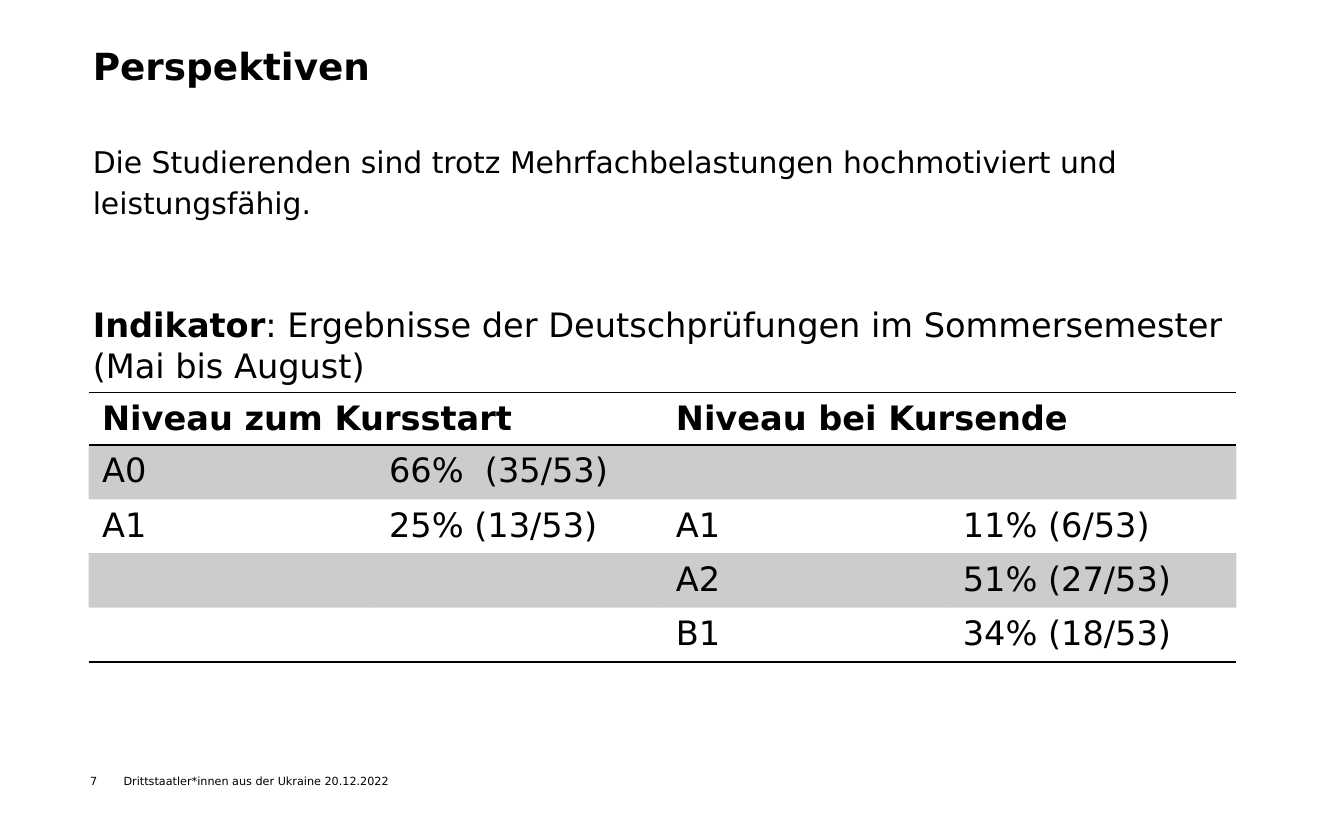
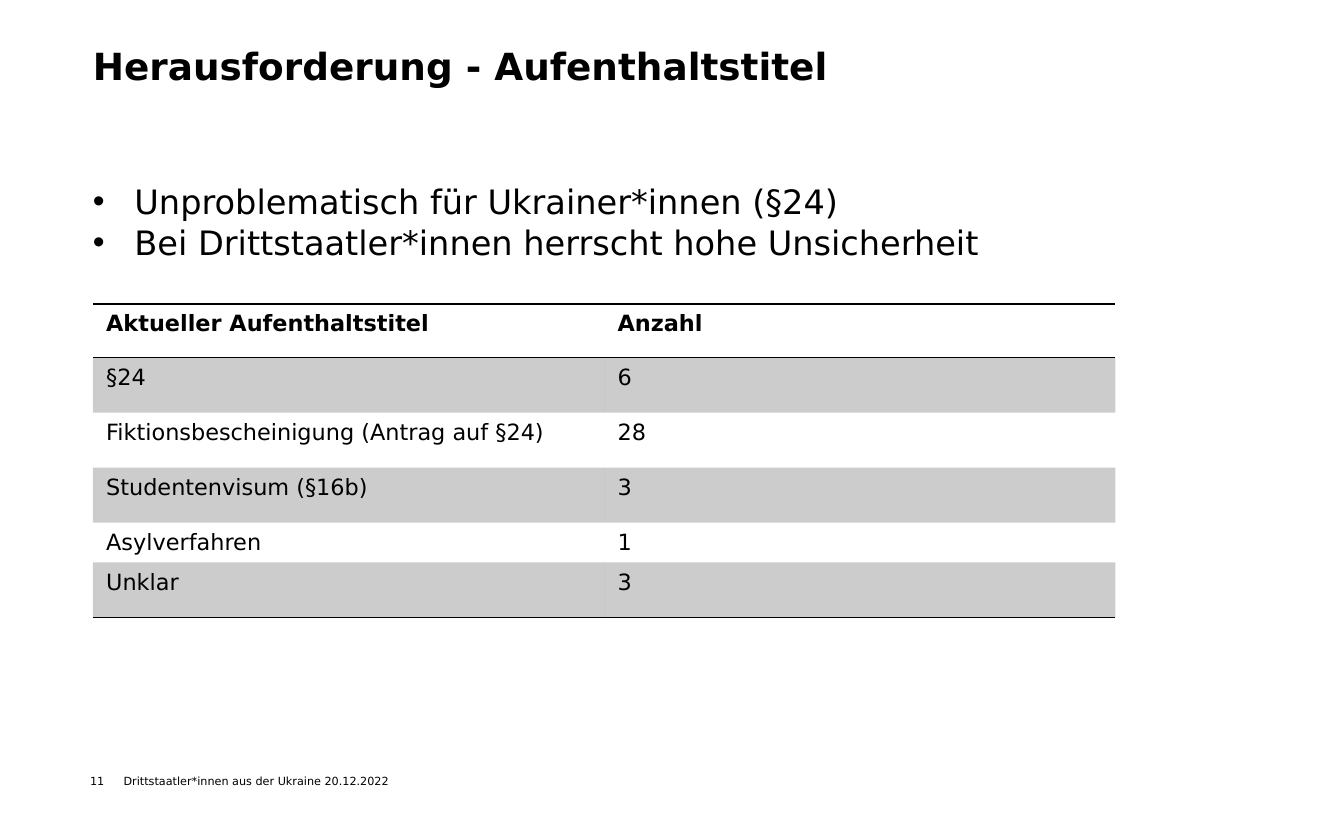
from typing import NamedTuple

from lxml.etree import SubElement
from pptx import Presentation
from pptx.dml.color import RGBColor
from pptx.enum.text import MSO_ANCHOR, MSO_AUTO_SIZE, PP_ALIGN
from pptx.oxml import parse_xml
from pptx.oxml.ns import nsdecls, qn
from pptx.util import Inches, Pt

BLACK = RGBColor(0, 0, 0)
FONT = "DejaVu Sans"
LEFT, WIDTH = 0.69, 8.62
LEAD = Pt(22)
FOOTER = "Drittstaatler*innen aus der Ukraine 20.12.2022"
NO_GRID = "{2D5ABB26-0587-4C30-8999-92F81FD0307C}"


class Box(NamedTuple):
    left: float
    top: float
    width: float
    height: float

    def lengths(self) -> list:
        return [Inches(side) for side in self]


class Grid(NamedTuple):
    box: Box
    heights: list[float]
    rows: list[list[str]]
    size: int
    span: int = 1


class Run(NamedTuple):
    text: str
    size: int = 18
    bold: bool = False


class Para(NamedTuple):
    runs: list[Run]
    before: int = 0
    bullet: bool = False


class Page(NamedTuple):
    number: int
    title: str
    body: Box
    paras: list[Para]
    grid: Grid


def write(para, text: str, *, size: int, bold: bool = False) -> None:
    run = para.add_run()
    run.text = text
    run.font.name = FONT
    run.font.size = Pt(size)
    run.font.bold = bold
    run.font.color.rgb = BLACK


def place(shape, box: Box):
    """Move a text shape and strip its insets; return its text frame."""
    shape.left, shape.top, shape.width, shape.height = box.lengths()
    frame = shape.text_frame
    frame.word_wrap = True
    frame.auto_size = MSO_AUTO_SIZE.NONE
    frame.vertical_anchor = MSO_ANCHOR.TOP
    frame.margin_left = frame.margin_right = 0
    frame.margin_top = frame.margin_bottom = 0
    return frame


def set_bullet(para, shown: bool) -> None:
    props = para._p.get_or_add_pPr()
    indent = Inches(0.31) if shown else 0
    props.set("marL", str(indent))
    props.set("indent", str(-indent))
    if shown:
        SubElement(props, qn("a:buChar")).set("char", "•")
    else:
        SubElement(props, qn("a:buNone"))


def add_body(shape, box: Box, paras: list[Para]) -> None:
    frame = place(shape, box)
    for index, item in enumerate(paras):
        para = frame.add_paragraph() if index else frame.paragraphs[0]
        set_bullet(para, item.bullet)
        para.alignment = PP_ALIGN.LEFT
        para.line_spacing = LEAD
        para.space_before = Pt(item.before)
        for run in item.runs:
            write(para, run.text, size=run.size, bold=run.bold)


def add_rules(cell, sides: str) -> None:
    """Draw black lines on the sides named by T and B."""
    props = cell._tc.get_or_add_tcPr()
    for index, side in enumerate(sides):
        props.insert(index, parse_xml(
            f'<a:ln{side} {nsdecls("a")} w="{Pt(1)}"><a:solidFill>'
            f'<a:srgbClr val="{BLACK}"/></a:solidFill></a:ln{side}>'))


def shade(cell, banded: bool) -> None:
    if not banded:
        cell.fill.background()
        return
    cell.fill.solid()
    cell.fill.fore_color.rgb = BLACK
    tint = cell._tc.tcPr.find(".//" + qn("a:srgbClr"))
    SubElement(tint, qn("a:alpha")).set("val", "20000")


def add_grid(slide, grid: Grid) -> None:
    count, last = len(grid.rows[0]), len(grid.rows) - 1
    frame = slide.shapes.add_table(last + 1, count, *grid.box.lengths())
    next(frame.element.iter(qn("a:tableStyleId"))).text = NO_GRID
    table = frame.table
    for col in table.columns:
        col.width = Inches(grid.box.width / count)
    for start in range(0, count, grid.span):
        if grid.span > 1:
            table.cell(0, start).merge(table.cell(0, start + grid.span - 1))
    for r, (row, height) in enumerate(zip(grid.rows, grid.heights)):
        table.rows[r].height = Inches(height)
        for c, text in enumerate(row):
            cell = table.cell(r, c)
            shade(cell, r % 2 == 1)
            add_rules(cell, "TB" if r == 0 else "B" if r == last else "")
            if text:
                write(cell.text_frame.paragraphs[0], text,
                      size=grid.size, bold=r == 0)


def add_footer(slide, number: int) -> None:
    for text, left, width in ((str(number), 0.67, 0.25), (FOOTER, 0.92, 5.66)):
        box = Box(left, 5.76, width, 0.1)
        shape = slide.shapes.add_textbox(*box.lengths())
        write(place(shape, box).paragraphs[0], text, size=6)


def add_page(deck, page: Page) -> None:
    slide = deck.slides.add_slide(deck.slide_layouts[1])
    add_footer(slide, page.number)
    title = place(slide.shapes.title, Box(LEFT, 0.36, WIDTH, 0.87)).paragraphs[0]
    title.alignment = PP_ALIGN.LEFT
    title.line_spacing = 0.9
    write(title, page.title, size=20, bold=True)
    add_body(slide.placeholders[1], page.body, page.paras)
    add_grid(slide, page.grid)


PAGES = [
    Page(
        7, "Perspektiven", Box(LEFT, 1.03, WIDTH, 3.98),
        [
            Para([Run("Die Studierenden sind trotz Mehrfachbelastungen "
                      "hochmotiviert und leistungsfähig.", size=16)]),
            Para([Run("Indikator", bold=True),
                  Run(": Ergebnisse der Deutschprüfungen im Sommersemester "
                      "(Mai bis August)")], before=44),
        ],
        Grid(Box(0.66, 2.92, 8.54, 2.02), [0.32] + [0.4] * 4, [
            ["Niveau zum Kursstart", "", "Niveau bei Kursende", ""],
            ["A0", "66%  (35/53)", "", ""],
            ["A1", "25% (13/53)", "A1", "11% (6/53)"],
            ["", "", "A2", "51% (27/53)"],
            ["", "", "B1", "34% (18/53)"],
        ], size=18, span=2),
    ),
    Page(
        11, "Herausforderung - Aufenthaltstitel", Box(LEFT, 1.34, WIDTH, 4.37),
        [
            Para([Run("Unproblematisch für Ukrainer*innen (§24)")], bullet=True),
            Para([Run("Bei Drittstaatler*innen herrscht hohe Unsicherheit")],
                 bullet=True),
        ],
        Grid(Box(LEFT, 2.26, 7.61, 2.32), [0.4, 0.41, 0.41, 0.41, 0.29, 0.41], [
            ["Aktueller Aufenthaltstitel", "Anzahl"],
            ["§24", "6"],
            ["Fiktionsbescheinigung (Antrag auf §24)", "28"],
            ["Studentenvisum (§16b)", "3"],
            ["Asylverfahren", "1"],
            ["Unklar", "3"],
        ], size=12),
    ),
]


def main() -> None:
    deck = Presentation()
    deck.slide_width, deck.slide_height = Inches(10), Inches(6.25)
    for page in PAGES:
        add_page(deck, page)
    deck.save("out.pptx")


if __name__ == "__main__":
    main()
